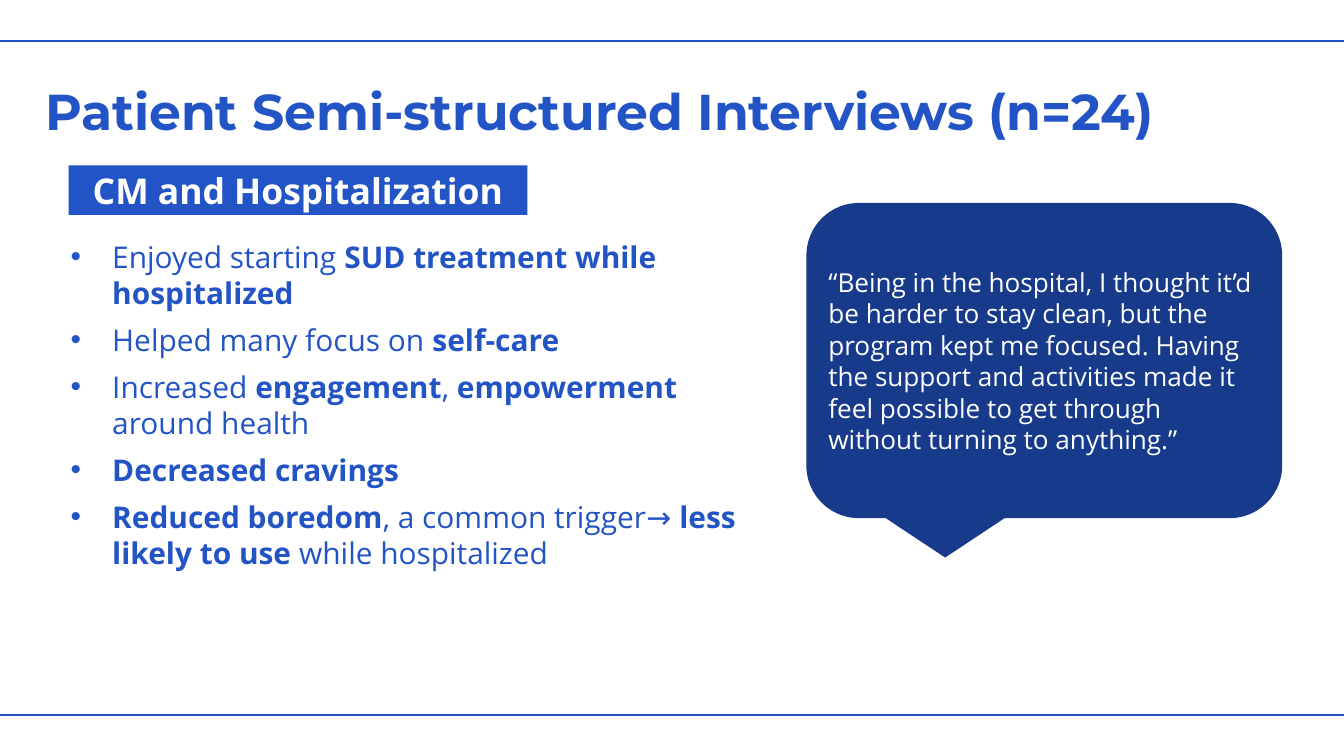
from lxml import etree
from pptx import Presentation
from pptx.dml.color import RGBColor
from pptx.enum.shapes import MSO_CONNECTOR, MSO_SHAPE
from pptx.enum.text import MSO_ANCHOR, MSO_AUTO_SIZE, PP_ALIGN
from pptx.oxml.ns import qn
from pptx.util import Inches, Pt

STRAIGHT = MSO_CONNECTOR.STRAIGHT
RECTANGLE = MSO_SHAPE.RECTANGLE
CALLOUT = MSO_SHAPE.ROUNDED_RECTANGULAR_CALLOUT
TOP, MIDDLE = MSO_ANCHOR.TOP, MSO_ANCHOR.MIDDLE
LEFT, CENTER = PP_ALIGN.LEFT, PP_ALIGN.CENTER
GROW = MSO_AUTO_SIZE.SHAPE_TO_FIT_TEXT

# Grid of one-inch cells: 20 columns by 11.25 rows
COLUMNS, ROWS = 20, 11.25
BLUE, NAVY, WHITE = "2254C5", "173A8B", "FFFFFF"
HEADING_FONT, BODY_FONT = "Montserrat", "Open Sans"
INDENT = 0.62

# Each finding is a list of (words, bold)
FINDINGS = [
    [("Enjoyed starting ", False), ("SUD treatment while hospitalized", True)],
    [("Helped many focus on ", False), ("self-care", True)],
    [("Increased ", False), ("engagement", True), (", ", False),
     ("empowerment", True), (" around health", False)],
    [("Decreased cravings", True)],
    [("Reduced boredom", True), (", a common trigger→ ", False),
     ("less likely to use ", True), ("while hospitalized", False)],
]
QUOTE = ("“Being in the hospital, I thought it’d be harder to stay clean, but the "
         "program kept me focused. Having the support and activities made it feel "
         "possible to get through without turning to anything.”")


def color(hex_code):
    return RGBColor.from_string(hex_code)


def grid(*cells):
    return [Inches(cell) for cell in cells]


def add_run(paragraph, words, size, hex_code, bold=False, font=BODY_FONT):
    run = paragraph.add_run()
    run.text = words
    run.font.name = font
    run.font.size = Pt(size)
    run.font.bold = bold
    run.font.color.rgb = color(hex_code)


def add_text_frame(slide, box):
    frame = slide.shapes.add_textbox(*grid(*box)).text_frame
    frame.word_wrap = True
    frame.auto_size = GROW
    frame.margin_left = frame.margin_top = frame.margin_right = frame.margin_bottom = 0
    return frame


def add_panel(slide, kind, box, fill, align, anchor):
    panel = slide.shapes.add_shape(kind, *grid(*box))
    panel.shadow.inherit = False
    panel.fill.solid()
    panel.fill.fore_color.rgb = color(fill)
    panel.line.fill.background()
    frame = panel.text_frame
    frame.word_wrap = True
    frame.vertical_anchor = anchor
    frame.paragraphs[0].alignment = align
    return frame


def add_rule(slide, start, end, row):
    rule = slide.shapes.add_connector(STRAIGHT, *grid(start, row, end, row))
    rule.line.color.rgb = color(BLUE)
    rule.line.width = Pt(3)
    etree.SubElement(rule._element.spPr, qn("a:effectLst"))


def add_title(slide, box):
    heading = add_text_frame(slide, box).paragraphs[0]
    heading.line_spacing = Pt(96)
    add_run(heading, "Patient Semi-structured Interviews (n=24)", 54, BLUE, True, HEADING_FONT)


def add_bullet(paragraph):
    properties = paragraph._p.get_or_add_pPr()
    properties.set("marL", str(Inches(INDENT)))
    properties.set("indent", str(-Inches(INDENT)))
    etree.SubElement(properties, qn("a:buFont"), typeface="Arial")
    etree.SubElement(properties, qn("a:buChar"), char="•")


def add_findings(slide, box):
    frame = add_text_frame(slide, box)
    for index, finding in enumerate(FINDINGS):
        paragraph = frame.add_paragraph() if index else frame.paragraphs[0]
        paragraph.space_after = Pt(12)
        add_bullet(paragraph)
        for words, bold in finding:
            add_run(paragraph, words, 32, BLUE, bold)


def add_topic_label(slide, box):
    frame = add_panel(slide, RECTANGLE, box, BLUE, CENTER, TOP)
    frame.auto_size = GROW
    add_run(frame.paragraphs[0], "CM and Hospitalization", 38, WHITE, True)


def add_quote(slide, box):
    frame = add_panel(slide, CALLOUT, box, NAVY, LEFT, MIDDLE)
    add_run(frame.paragraphs[0], QUOTE, 28, WHITE)


def main():
    deck = Presentation()
    deck.slide_width, deck.slide_height = grid(COLUMNS, ROWS)
    slide = deck.slides.add_slide(deck.slide_layouts[6])

    # Rules and title
    add_rule(slide, -0.08, COLUMNS + 0.03, ROWS - 0.61)
    add_title(slide, (0.67, 0.76, 18.42, 1.2))
    add_rule(slide, -0.06, COLUMNS + 0.06, 0.61)

    # Findings on the left, patient quote on the right
    add_findings(slide, (1.05, 3.55, 10.33, 4.98))
    add_topic_label(slide, (1.02, 2.46, 6.83, 0.74))
    add_quote(slide, (12, 3.02, 7.08, 4.69))

    deck.save("out.pptx")


if __name__ == "__main__":
    main()
